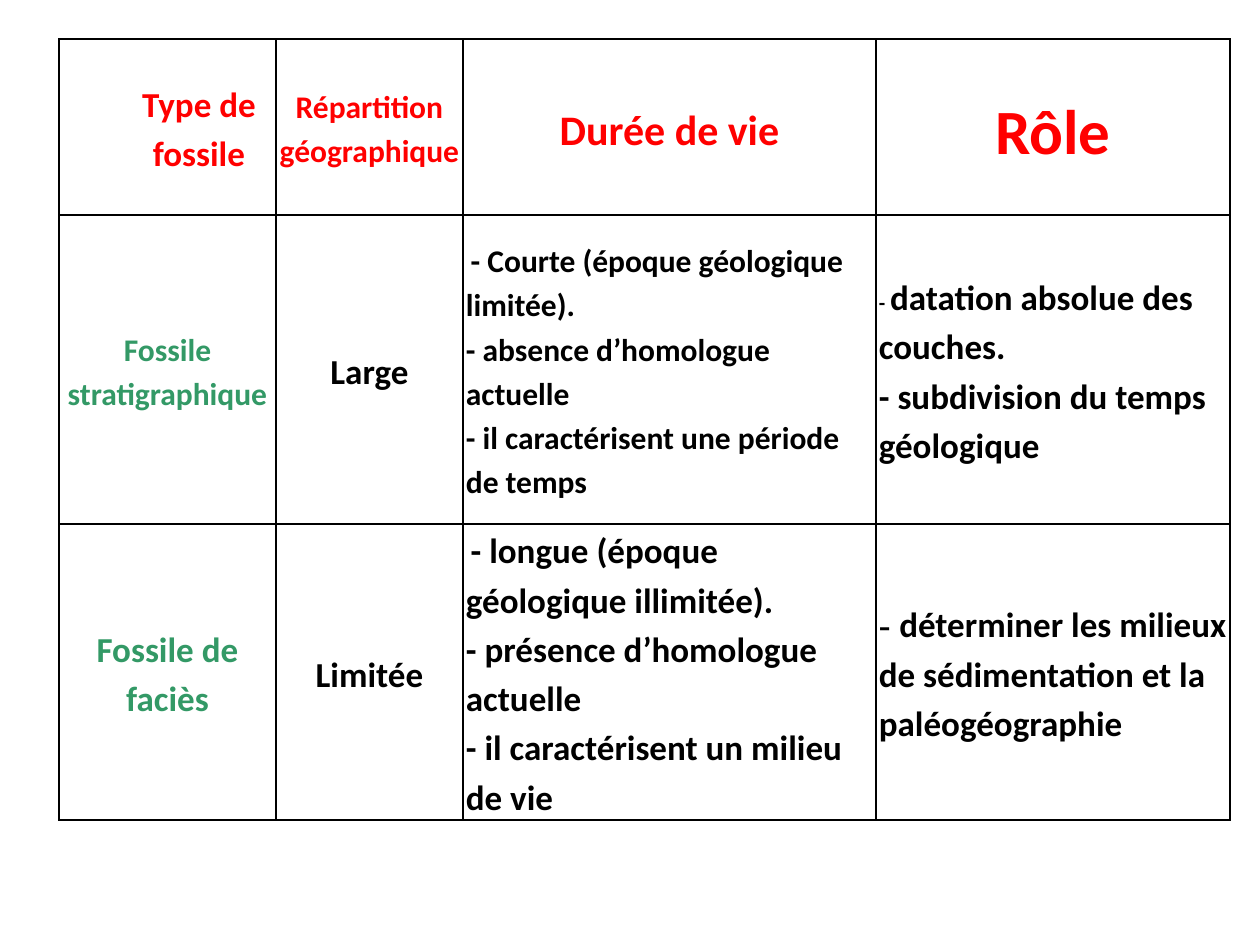
from lxml.etree import SubElement
from pptx import Presentation
from pptx.dml.color import RGBColor
from pptx.enum.text import MSO_ANCHOR, PP_ALIGN
from pptx.oxml.ns import qn
from pptx.util import Pt

SCALE = 914400 / 126
COLORS = {"head": "FF0000", "type": "339966", "text": "000000", "line": "000000"}
FONT = "Calibri"
COLS = [217, 187, 413, 354]
ROWS = [176, 309, 296]
INDENT = 63

# Each cell: font size, colour name, paragraphs, optional lead (text, size, font)
CELLS = [
    [
        (20, "head", ["Type de fossile"]),
        (18, "head", ["Répartition géographique"]),
        (24, "head", ["Durée de vie"]),
        (36, "head", ["Rôle"]),
    ],
    [
        (18, "type", ["Fossile stratigraphique"]),
        (20, "text", ["Large"]),
        (18, "text", ["- Courte (époque géologique limitée).",
                      "- absence d’homologue actuelle",
                      "- il caractérisent une période de temps"], (" ", 12, FONT)),
        (20, "text", ["datation absolue des couches.",
                      "- subdivision du temps géologique"], ("- ", 12, FONT)),
    ],
    [
        (20, "type", ["Fossile de faciès"]),
        (20, "text", ["Limitée"]),
        (20, "text", ["- longue (époque géologique illimitée).",
                      "- présence d’homologue actuelle",
                      "- il caractérisent un milieu de vie"], (" ", 12, FONT)),
        (20, "text", ["déterminer les milieux de sédimentation et la paléogéographie"],
         ("- ", 20, "Times New Roman")),
    ],
]


def px(n):
    return round(n * SCALE)


def style(font, size, color, name=FONT):
    font.size, font.bold, font.name = Pt(size), True, name
    font.color.rgb = RGBColor.from_string(COLORS[color])


def border(cell):
    props = cell._tc.get_or_add_tcPr()
    for i, side in enumerate(("a:lnL", "a:lnR", "a:lnT", "a:lnB")):
        line = props.makeelement(qn(side), {"w": str(Pt(1))})
        fill = SubElement(line, qn("a:solidFill"))
        SubElement(fill, qn("a:srgbClr"), val=COLORS["line"])
        props.insert(i, line)


def write(cell, align, size, color, lines, lead=None):
    """Fill one cell; lead is a run of its own style before the first line."""
    frame = cell.text_frame
    for i, line in enumerate(lines):
        para = frame.add_paragraph() if i else frame.paragraphs[0]
        para.alignment, para.line_spacing = align, 1.15
        style(para.font, size, color)
        if lead and not i:
            run = para.add_run()
            run.text = lead[0]
            style(run.font, lead[1], color, lead[2])
        run = para.add_run()
        run.text = line
        style(run.font, size, color)


def grid(slide, left, top):
    shape = slide.shapes.add_table(len(ROWS), len(COLS), px(left), px(top),
                                   px(sum(COLS)), px(sum(ROWS)))
    table = shape.table
    table.first_row = table.horz_banding = False
    for col, width in zip(table.columns, COLS):
        col.width = px(width)
    for row, height in zip(table.rows, ROWS):
        row.height = px(height)
    for r, row in enumerate(CELLS):
        for c, data in enumerate(row):
            cell = table.cell(r, c)
            cell.fill.background()
            border(cell)
            cell.vertical_anchor = MSO_ANCHOR.MIDDLE
            cell.margin_left = cell.margin_right = px(3)
            cell.margin_top = cell.margin_bottom = 0
            centred = r == 0 or c < 2
            write(cell, PP_ALIGN.CENTER if centred else PP_ALIGN.LEFT, *data)
    first = table.cell(0, 0).text_frame.paragraphs[0]
    first._p.get_or_add_pPr().set("marL", str(px(INDENT)))


def main():
    deck = Presentation()
    deck.slide_width, deck.slide_height = px(1260), px(945)
    slide = deck.slides.add_slide(deck.slide_layouts[6])
    grid(slide, 59, 39)
    deck.save("out.pptx")


if __name__ == "__main__":
    main()
